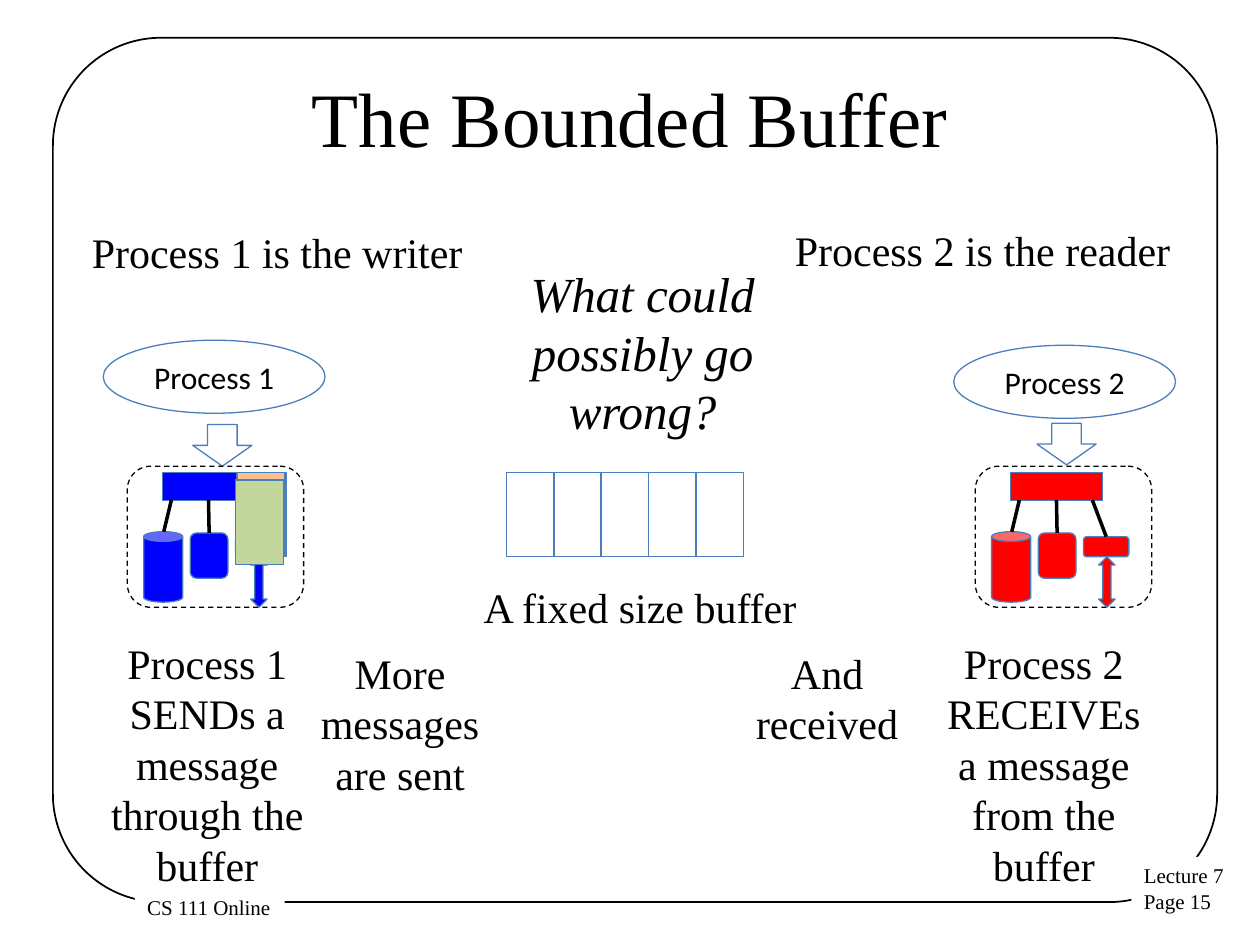
from lxml import etree
from pptx import Presentation
from pptx.dml.color import RGBColor
from pptx.enum.dml import MSO_LINE
from pptx.enum.shapes import MSO_CONNECTOR, MSO_SHAPE
from pptx.enum.text import MSO_ANCHOR, MSO_AUTO_SIZE, PP_ALIGN
from pptx.oxml.ns import qn
from pptx.util import Inches, Pt

BLUE, RED, EDGE = "0000FF", "FF0000", "4B7EBC"
SERIF = "Times New Roman"

prs = Presentation()
prs.slide_width, prs.slide_height = Inches(10), Inches(7.5)
slide = prs.slides.add_slide(prs.slide_layouts[6])
shapes = slide.shapes


def add_block(kind, box, fill=None, line=EDGE, width=0.75):
    block = shapes.add_shape(kind, *[Inches(v) for v in box])
    block.shadow.inherit = False
    if fill:
        block.fill.solid()
        block.fill.fore_color.rgb = RGBColor.from_string(fill)
    else:
        block.fill.background()
    if line:
        block.line.color.rgb = RGBColor.from_string(line)
        block.line.width = Pt(width)
    else:
        block.line.fill.background()
    return block


def write(block, text, size, font=SERIF, align=PP_ALIGN.LEFT,
          anchor=MSO_ANCHOR.TOP, wrap=True, italic=False):
    frame = block.text_frame
    frame.text = text
    frame_format = {"word_wrap": wrap, "vertical_anchor": anchor,
                    "auto_size": MSO_AUTO_SIZE.NONE}
    for name, value in frame_format.items():
        setattr(frame, name, value)
    font_format = {"name": font, "size": Pt(size), "italic": italic}
    for paragraph in frame.paragraphs:
        paragraph.alignment = align
        for run in paragraph.runs:
            for name, value in font_format.items():
                setattr(run.font, name, value)
            run.font.color.rgb = RGBColor.from_string("000000")


# Page frame and footers
page_frame = add_block(MSO_SHAPE.ROUNDED_RECTANGLE, (0.42, 0.3, 9.24, 6.86),
                       line="000000", width=1)
page_frame.adjustments[0] = 0.125
for text, box in [("Lecture 7\nPage 15", (8.98, 6.8, 0.84, 0.51)),
                  ("CS 111 Online", (1.07, 7.05, 1.19, 0.3))]:
    footer = add_block(MSO_SHAPE.RECTANGLE, box, "FFFFFF", line=None)
    write(footer, text, 12, wrap=False)

# Title
title = shapes.add_textbox(Inches(0.5), Inches(0.3), Inches(9), Inches(1.25))
write(title, "The Bounded Buffer", 44, align=PP_ALIGN.CENTER, anchor=MSO_ANCHOR.MIDDLE)

# The two processes, each with its parts placed from the left edge x
processes = [
    ("Process 1", 1.14, BLUE, (0.82, 2.7), (1.53, 3.37)),
    ("Process 2", 7.87, RED, (7.57, 2.74), (8.23, 3.36)),
]
for name, x, color, oval_at, arrow_at in processes:
    oval = add_block(MSO_SHAPE.OVAL, (*oval_at, 1.76, 0.58))
    write(oval, name, 18, "Calibri", PP_ALIGN.CENTER, MSO_ANCHOR.MIDDLE)
    add_block(MSO_SHAPE.DOWN_ARROW, (*arrow_at, 0.47, 0.33), "FFFFFF")

    bar = add_block(MSO_SHAPE.RECTANGLE, (x + 0.15, 3.75, 0.73, 0.22), color)
    memory = add_block(MSO_SHAPE.ROUNDED_RECTANGLE, (x + 0.37, 4.23, 0.3, 0.36), color)
    boundary = add_block(MSO_SHAPE.ROUNDED_RECTANGLE, (x + 0.01, 3.56, 1.12, 1.4),
                         line="000000")
    boundary.rotation = 90
    boundary.line.dash_style = MSO_LINE.DASH
    add_block(MSO_SHAPE.CAN, (x, 4.22, 0.31, 0.56), color)
    port = add_block(MSO_SHAPE.ROUNDED_RECTANGLE, (x + 0.73, 4.26, 0.36, 0.16), color)
    add_block(MSO_SHAPE.UP_DOWN_ARROW, (x + 0.85, 4.42, 0.13, 0.4), color)

    # Legs from the bar: to the disk, the memory and (reader only) the port
    legs = [(0.22, 0.16, 4.22, None), (0.52, 0.52, 4.23, memory)]
    if color == RED:
        legs.append((0.8, 0.91, 4.26, port))
    for start, end, bottom, target in legs:
        leg = shapes.add_connector(MSO_CONNECTOR.STRAIGHT, Inches(x + start), Inches(3.97),
                                   Inches(x + end), Inches(bottom))
        leg.line.color.rgb = RGBColor.from_string("000000")
        leg.line.width = Pt(2)
        etree.SubElement(leg.element.spPr, qn("a:effectLst"))
        if target is memory:
            leg.begin_connect(bar, 2)
        if target is not None:
            leg.end_connect(target, 0)

# Buffer slots
for slot in range(5):
    add_block(MSO_SHAPE.RECTANGLE, (4.02 + 0.375 * slot, 3.75, 0.38, 0.67))

# Messages stacked at the writer
for x, y, color in [(1.89, 3.75, "FFFF00"), (1.88, 3.75, "FAC090"), (1.87, 3.81, "C3D69B")]:
    add_block(MSO_SHAPE.RECTANGLE, (x, y, 0.38, 0.67), color)

# Captions
left, center = {}, {"align": PP_ALIGN.CENTER}
captions = [
    ("A fixed size buffer", (3.74, 4.57, 2.73, 0.5), 24, {"wrap": False}),
    ("Process 1 is the writer", (0.63, 1.75, 3.32, 0.5), 24, left),
    ("Process 2 is the reader", (6.21, 1.73, 3.32, 0.5), 24, left),
    ("Process 1 SENDs a message through the buffer", (0.71, 5.01, 1.87, 2.12), 24, center),
    ("Process 2 RECEIVEs\va message from the buffer", (7.35, 5.01, 1.87, 2.12), 24, center),
    ("More messages are sent", (2.24, 5.09, 1.87, 1.31), 24, center),
    ("And received", (5.63, 5.09, 1.87, 0.91), 24, center),
    ("What could possibly go wrong?", (3.74, 2.04, 2.72, 1.51), 28,
     {"align": PP_ALIGN.CENTER, "italic": True}),
]
for text, box, size, style in captions:
    caption = shapes.add_textbox(*[Inches(v) for v in box])
    write(caption, text, size, **style)

prs.save("out.pptx")
